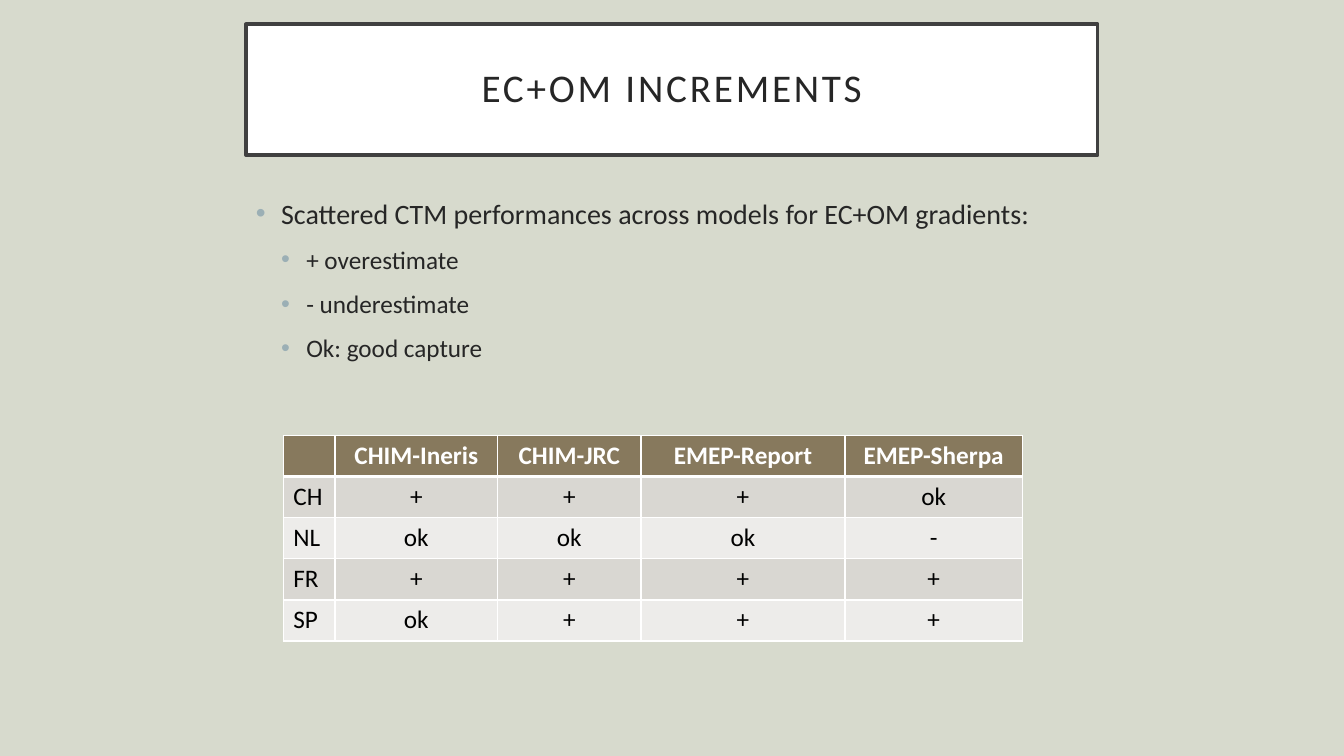
import pptx
import pptx.dml.color
import pptx.enum.text
import pptx.oxml
import pptx.oxml.ns
import pptx.util

RGB = pptx.dml.color.RGBColor
BACKGROUND = RGB(0xD7, 0xDA, 0xCD)
WHITE = RGB(0xFF, 0xFF, 0xFF)
BLACK = RGB(0, 0, 0)
FRAME = RGB(0x40, 0x40, 0x40)
INK = RGB(0x26, 0x26, 0x26)
BULLET = RGB(0x9B, 0xAF, 0xB5)
HEADER = RGB(0x87, 0x79, 0x5D)
BANDS = (RGB(0xD9, 0xD7, 0xD2), RGB(0xED, 0xEC, 0xEA))

SLIDE_W, SLIDE_H = pptx.util.Inches(13.333), pptx.util.Inches(7.5)
INDENT = pptx.util.Inches(0.25)
ALIGN = pptx.enum.text.PP_ALIGN
ANCHOR = pptx.enum.text.MSO_ANCHOR

# Boxes as percent of the slide: left, top, width, height
TITLE_BOX = (18.3, 3.2, 63.38, 17.33)
LEGEND_BOX = (18.3, 25.33, 64.5, 59.2)
SCORES_BOX = (21.08, 57.6, 55, 27.2)

LEGEND = [
    (0, "Scattered CTM performances across models for EC+OM gradients:"),
    (1, "+ overestimate"),
    (1, "- underestimate"),
    (1, "Ok: good capture"),
]
SCORES = [
    ("", "CHIM-Ineris", "CHIM-JRC", "EMEP-Report", "EMEP-Sherpa"),
    ("CH", "+", "+", "+", "ok"),
    ("NL", "ok", "ok", "ok", "-"),
    ("FR", "+", "+", "+", "+"),
    ("SP", "ok", "+", "+", "+"),
]
COLUMN_SHARES = (0.07, 0.22, 0.194, 0.276, 0.24)


def to_lengths(box):
    sides = (SLIDE_W, SLIDE_H, SLIDE_W, SLIDE_H)
    return [round(side * share / 100) for side, share in zip(sides, box)]


def apply(target, formats):
    for name, value in formats.items():
        setattr(target, name, value)


def add_text(paragraph, text, size, color, bold=False):
    run = paragraph.add_run()
    run.text = text
    apply(run.font, {"name": "Calibri", "size": pptx.util.Pt(size), "bold": bold})
    run.font.color.rgb = color
    return run


def add_element(parent, xml):
    parent.append(pptx.oxml.parse_xml(xml.replace(
        " ", f" {pptx.oxml.ns.nsdecls('a')} ", 1)))


def fill_title(slide, box):
    title = slide.shapes.title
    apply(title, dict(zip(("left", "top", "width", "height"), to_lengths(box))))
    title.fill.solid()
    title.fill.fore_color.rgb = WHITE
    title.line.color.rgb = FRAME
    title.line.width = pptx.util.Pt(2.5)
    inset = pptx.util.Inches(0.2)
    frame = title.text_frame
    apply(frame, {"word_wrap": True, "vertical_anchor": ANCHOR.MIDDLE,
                  "auto_size": pptx.enum.text.MSO_AUTO_SIZE.NONE,
                  "margin_left": inset, "margin_right": inset,
                  "margin_top": inset, "margin_bottom": inset})
    heading = frame.paragraphs[0]
    apply(heading, {"alignment": ALIGN.CENTER, "line_spacing": 0.9})
    run = add_text(heading, "EC+OM INCREMENTS", 28, INK)
    run.font._element.set("spc", "200")


def add_legend(slide, box):
    frame = slide.shapes.add_textbox(*to_lengths(box)).text_frame
    frame.word_wrap = True
    for number, (level, text) in enumerate(LEGEND):
        item = frame.add_paragraph() if number else frame.paragraphs[0]
        apply(item, {"level": level, "space_before": pptx.util.Pt(10 if number else 0)})
        # Hanging bullet
        properties = item._p.get_or_add_pPr()
        properties.set("marL", str(INDENT * (level + 1)))
        properties.set("indent", str(-INDENT))
        add_element(properties, f'<a:buClr ><a:srgbClr val="{BULLET}"/></a:buClr>')
        add_element(properties, '<a:buFont typeface="Arial"/>')
        add_element(properties, '<a:buChar char="•"/>')
        add_text(item, text, 18 if level else 20, INK)


def set_borders(cell, row):
    # The rule under the header is thicker
    widths = {"L": 1, "R": 1, "T": 3 if row == 1 else 1, "B": 3 if row == 0 else 1}
    for side, width in widths.items():
        add_element(
            cell._tc.get_or_add_tcPr(),
            f'<a:ln{side} w="{pptx.util.Pt(width)}"><a:solidFill>'
            f'<a:srgbClr val="{WHITE}"/></a:solidFill></a:ln{side}>')


def add_scores(slide, box):
    left, top, width, height = to_lengths(box)
    table = slide.shapes.add_table(
        len(SCORES), len(COLUMN_SHARES), left, top, width, height).table
    for column, share in zip(table.columns, COLUMN_SHARES):
        column.width = round(width * share)
    for row, values in enumerate(SCORES):
        is_header = row == 0
        for column, value in enumerate(values):
            cell = table.cell(row, column)
            set_borders(cell, row)
            cell.fill.solid()
            cell.fill.fore_color.rgb = HEADER if is_header else BANDS[(row - 1) % 2]
            if value:
                score = cell.text_frame.paragraphs[0]
                score.alignment = ALIGN.CENTER if column else ALIGN.LEFT
                add_text(score, value, 18, WHITE if is_header else BLACK, is_header)


def main():
    deck = pptx.Presentation()
    apply(deck, {"slide_width": SLIDE_W, "slide_height": SLIDE_H})
    slide = deck.slides.add_slide(deck.slide_layouts[5])
    slide.background.fill.solid()
    slide.background.fill.fore_color.rgb = BACKGROUND
    fill_title(slide, TITLE_BOX)
    add_legend(slide, LEGEND_BOX)
    add_scores(slide, SCORES_BOX)
    deck.save("out.pptx")


if __name__ == "__main__":
    main()
